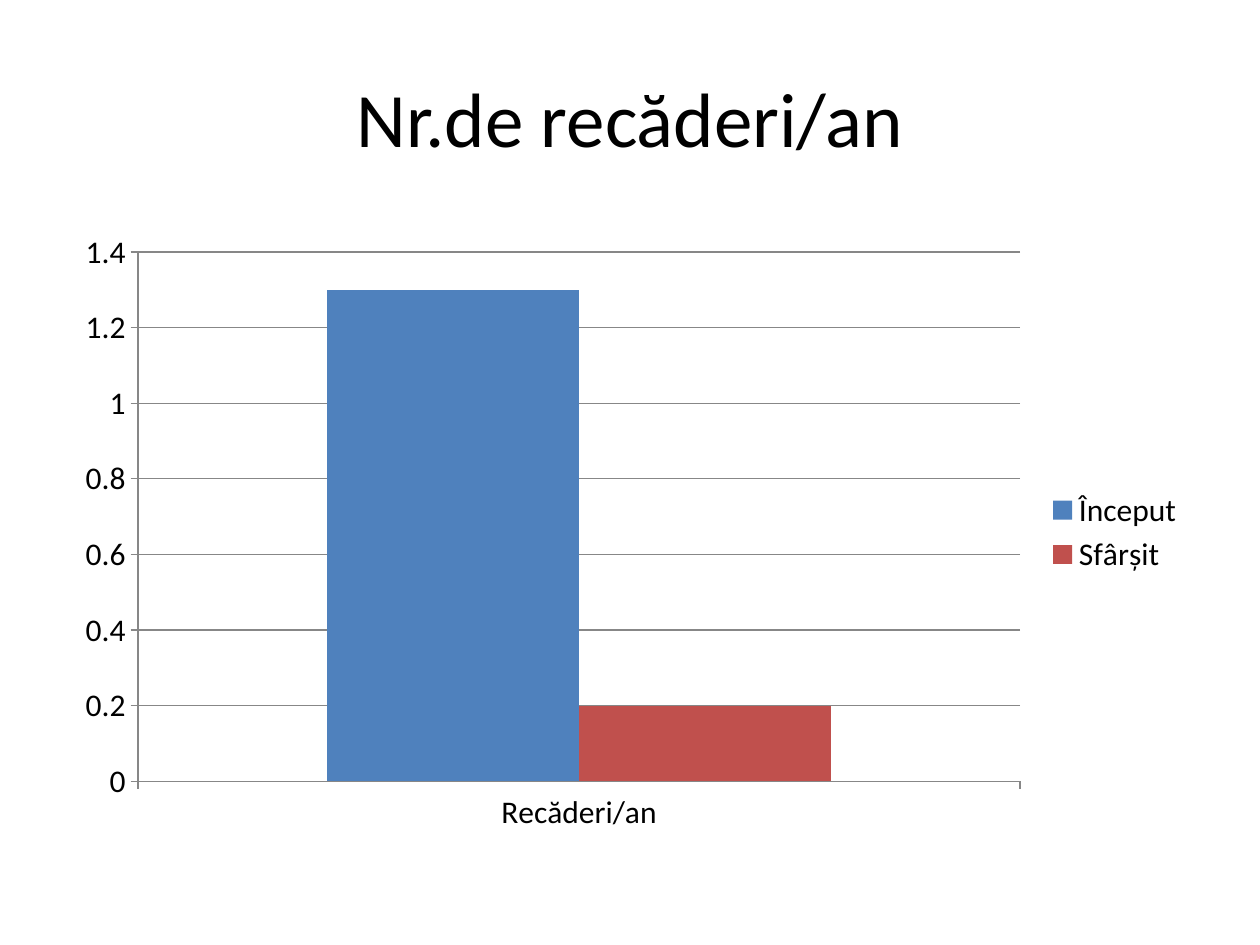
import pptx
import pptx.chart.data
import pptx.dml.color
import pptx.enum.chart
import pptx.enum.text
import pptx.util

Inches = pptx.util.Inches
COLORS = {"text": "000000", "start": "4F81BD", "end": "C0504D", "lines": "878787"}


def rgb(name):
    return pptx.dml.color.RGBColor.from_string(COLORS[name])


def apply_format(target, values):
    for name, value in values.items():
        setattr(target, name, value)


class SlideBuilder:
    """Holds the text style and the current slide."""

    def __init__(self, slide, font_name="Calibri"):
        self.slide = slide
        self.font_name = font_name

    def style_font(self, font, size):
        apply_format(font, {"name": self.font_name, "size": pptx.util.Pt(size)})
        font.color.rgb = rgb("text")

    def add_title(self, text, left, top, width, height):
        box = self.slide.shapes.add_textbox(
            Inches(left), Inches(top), Inches(width), Inches(height))
        apply_format(box.text_frame, {
            "word_wrap": True,
            "vertical_anchor": pptx.enum.text.MSO_ANCHOR.MIDDLE,
        })
        paragraph = box.text_frame.paragraphs[0]
        paragraph.alignment = pptx.enum.text.PP_ALIGN.CENTER
        run = paragraph.add_run()
        run.text = text
        self.style_font(run.font, 44)

    def add_column_chart(self, categories, series, left, top, width, height):
        data = pptx.chart.data.CategoryChartData()
        data.categories = categories
        for name, values, _ in series:
            data.add_series(name, values)
        chart = self.slide.shapes.add_chart(
            pptx.enum.chart.XL_CHART_TYPE.COLUMN_CLUSTERED,
            Inches(left), Inches(top), Inches(width), Inches(height), data).chart
        chart.has_title = False
        self.style_font(chart.font, 18)
        chart.has_legend = True
        apply_format(chart.legend, {
            "position": pptx.enum.chart.XL_LEGEND_POSITION.RIGHT,
            "include_in_layout": False,
        })
        plot = chart.plots[0]
        apply_format(plot, {"gap_width": 150, "overlap": 0, "vary_by_categories": False})
        for column, (_, _, color) in zip(plot.series, series):
            column.format.fill.solid()
            column.format.fill.fore_color.rgb = rgb(color)
        for axis in (chart.category_axis, chart.value_axis):
            axis.major_tick_mark = pptx.enum.chart.XL_TICK_MARK.OUTSIDE
            axis.format.line.color.rgb = rgb("lines")
        chart.value_axis.has_major_gridlines = True
        chart.value_axis.major_gridlines.format.line.color.rgb = rgb("lines")


def main():
    presentation = pptx.Presentation()
    apply_format(presentation, {"slide_width": Inches(10), "slide_height": Inches(7.5)})
    builder = SlideBuilder(presentation.slides.add_slide(presentation.slide_layouts[6]))
    builder.add_title("Nr.de recăderi/an", 0.5, 0.3, 9, 1.25)
    builder.add_column_chart(
        ["Recăderi/an"],
        [("Început", [1.3], "start"), ("Sfârșit", [0.2], "end")],
        0.5, 1.75, 9, 4.95)
    presentation.save("out.pptx")


if __name__ == "__main__":
    main()
